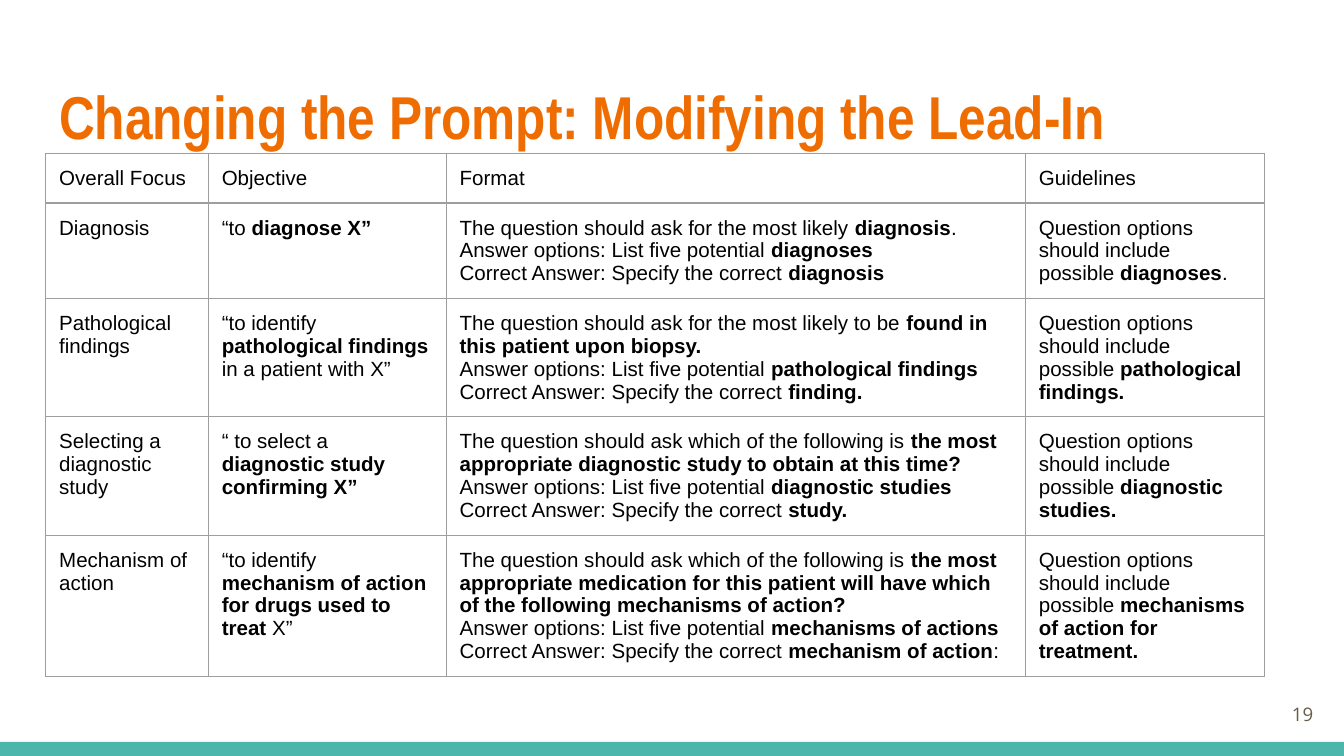
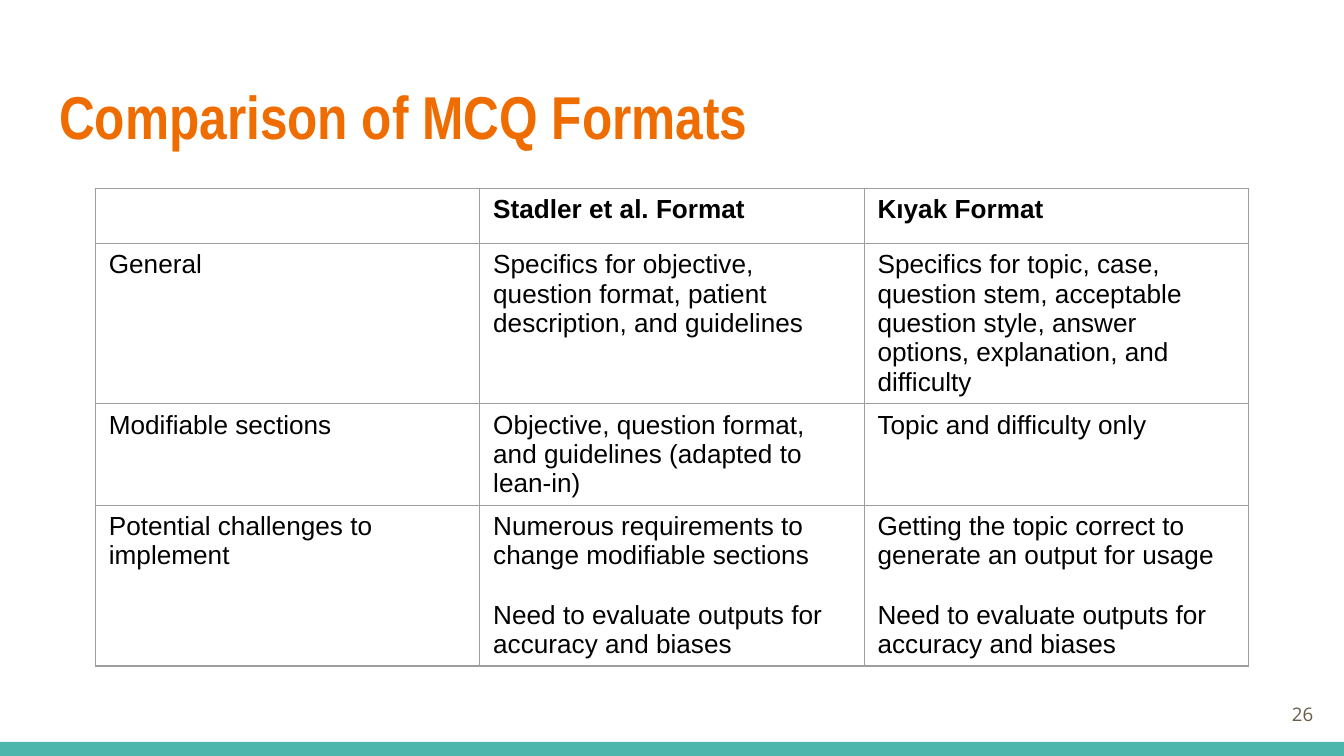
from dataclasses import dataclass

from lxml import etree
from pptx import Presentation
from pptx.dml.color import RGBColor
from pptx.enum.shapes import MSO_SHAPE
from pptx.enum.text import MSO_ANCHOR, MSO_AUTO_SIZE, PP_ALIGN
from pptx.oxml.ns import qn
from pptx.util import Inches, Pt

RECTANGLE = MSO_SHAPE.RECTANGLE
TOP, MIDDLE = MSO_ANCHOR.TOP, MSO_ANCHOR.MIDDLE
LEFT, RIGHT = PP_ALIGN.LEFT, PP_ALIGN.RIGHT
NO_AUTOFIT = MSO_AUTO_SIZE.NONE
TITLE_ONLY = 5
BOLD_MARK = "**"
LINE_BREAK = "\v"
SLIDE_WIDTH = 10
SLIDE_HEIGHT = SLIDE_WIDTH * 9 / 16


@dataclass(frozen=True)
class Theme:
    title_color: str = "EF6C00"
    band_color: str = "4DB6AC"
    text_color: str = "000000"
    number_color: str = "695D46"
    border_color: str = "9E9E9E"
    title_font: str = "Arial Narrow"
    body_font: str = "Arial"
    number_font: str = "Open Sans"
    title_size: float = 32.4
    number_size: float = 10
    border_width: float = 0.75
    inset: float = 0.1


@dataclass(frozen=True)
class TableSpec:
    left: float
    top: float
    col_widths: tuple[float, ...]
    row_heights: tuple[float, ...]
    rows: tuple[tuple[str, ...], ...]
    font_size: float
    inset_y: float
    paragraph_gap: float = 0


@dataclass(frozen=True)
class SlideSpec:
    title: str
    number: str
    table: TableSpec


THEME = Theme()

LEAD_IN_SLIDE = SlideSpec(
    title="Changing the Prompt: Modifying the Lead-In",
    number="19",
    table=TableSpec(
        left=0.34,
        top=1.14,
        col_widths=(1.21, 1.77, 4.31, 1.78),
        row_heights=(0.37, 0.7, 0.88, 0.88, 1.05),
        font_size=11,
        inset_y=0.1,
        rows=(
            ("Overall Focus", "Objective", "Format", "Guidelines"),
            (
                "Diagnosis",
                "“to **diagnose X”**",
                "The question should ask for the most likely **diagnosis**.\n"
                "Answer options: List five potential **diagnoses**\n"
                "Correct Answer: Specify the correct **diagnosis**",
                "Question options should include possible **diagnoses**.",
            ),
            (
                "Pathological findings",
                "“to identify **pathological findings **in a patient with X”",
                "The question should ask for the most likely to be "
                "**found in this patient upon biopsy.\v**"
                "Answer options: List five potential **pathological findings**\n"
                "Correct Answer: Specify the correct **finding.**",
                "Question options should include possible **pathological findings.**",
            ),
            (
                "Selecting a diagnostic study",
                "“ to select a **diagnostic study confirming X”**",
                "The question should ask which of the following is "
                "**the most appropriate diagnostic study to obtain at this time?\v**"
                "Answer options: List five potential **diagnostic studies**\n"
                "Correct Answer: Specify the correct **study.**",
                "Question options should include possible **diagnostic studies.**",
            ),
            (
                "Mechanism of action",
                "“to identify **mechanism of action for drugs used to treat **X”",
                "The question should ask which of the following is "
                "**the most appropriate medication for this patient will have "
                "which of the following mechanisms of action?\v**"
                "Answer options: List five potential **mechanisms of actions **"
                "Correct Answer: Specify the correct **mechanism of action**:",
                "Question options should include possible "
                "**mechanisms of action for treatment.**",
            ),
        ),
    ),
)

FORMATS_SLIDE = SlideSpec(
    title="Comparison of MCQ Formats",
    number="26",
    table=TableSpec(
        left=0.71,
        top=1.4,
        col_widths=(2.86,) * 3,
        row_heights=(0.41, 1.19, 0.75, 1.19),
        font_size=14,
        inset_y=0.05,
        paragraph_gap=16,
        rows=(
            ("", "**Stadler et al. Format**", "**Kıyak Format**"),
            (
                "General",
                "Specifics for objective, question format, patient description, "
                "and guidelines",
                "Specifics for topic, case, question stem, acceptable question "
                "style, answer options, explanation, and difficulty",
            ),
            (
                "Modifiable sections",
                "Objective, question format, and guidelines (adapted to lean-in)",
                "Topic and difficulty only",
            ),
            (
                "Potential challenges to implement",
                "Numerous requirements to change modifiable sections\n"
                "Need to evaluate outputs for accuracy and biases",
                "Getting the topic correct to generate an output for usage\n"
                "Need to evaluate outputs for accuracy and biases",
            ),
        ),
    ),
)


def style_font(font, name: str, size: float, color: str, bold: bool = False) -> None:
    font.name = name
    font.size = Pt(size)
    font.bold = bold
    font.color.rgb = RGBColor.from_string(color)


def set_frame(tf, anchor) -> None:
    """Give a text frame equal insets, wrapping and an anchor."""
    tf.word_wrap = True
    tf.auto_size = NO_AUTOFIT
    tf.vertical_anchor = anchor
    tf.margin_left = tf.margin_right = Inches(THEME.inset)
    tf.margin_top = tf.margin_bottom = Inches(THEME.inset)


def add_title(s, text: str) -> None:
    sp = s.shapes.title
    sp.left, sp.top = Inches(0.34), Inches(0.49)
    sp.width, sp.height = Inches(9.32), Inches(0.77)
    tf = sp.text_frame
    tf.text = text
    set_frame(tf, TOP)
    p = tf.paragraphs[0]
    p.alignment = LEFT
    style_font(p.runs[0].font, THEME.title_font, THEME.title_size,
               THEME.title_color, bold=True)


def add_band(s) -> None:
    sp = s.shapes.add_shape(RECTANGLE, Inches(0), Inches(5.52),
                            Inches(SLIDE_WIDTH), Inches(0.11))
    sp.shadow.inherit = False
    sp.fill.solid()
    sp.fill.fore_color.rgb = RGBColor.from_string(THEME.band_color)
    sp.line.fill.background()


def add_number(s, number: str) -> None:
    sp = s.shapes.add_textbox(Inches(9.27), Inches(5.1), Inches(0.6), Inches(0.43))
    tf = sp.text_frame
    tf.text = number
    set_frame(tf, MIDDLE)
    p = tf.paragraphs[0]
    p.alignment = RIGHT
    style_font(p.runs[0].font, THEME.number_font, THEME.number_size, THEME.number_color)


def set_borders(cell) -> None:
    tc_pr = cell._tc.get_or_add_tcPr()
    for index, side in enumerate(("a:lnL", "a:lnR", "a:lnT", "a:lnB")):
        ln = etree.Element(qn(side), w=str(Pt(THEME.border_width)))
        fill = etree.SubElement(ln, qn("a:solidFill"))
        etree.SubElement(fill, qn("a:srgbClr"), val=THEME.border_color)
        tc_pr.insert(index, ln)


def add_marked_runs(p, line: str, size: float) -> None:
    """Write a line in which ** toggles bold and a vertical tab breaks the line."""
    for i, part in enumerate(line.split(BOLD_MARK)):
        for j, text in enumerate(part.split(LINE_BREAK)):
            if j:
                p.add_line_break()
            if text:
                r = p.add_run()
                r.text = text
                style_font(r.font, THEME.body_font, size, THEME.text_color,
                           bold=i % 2 == 1)


def fill_cell(cell, text: str, spec: TableSpec) -> None:
    cell.margin_left = cell.margin_right = Inches(THEME.inset)
    cell.margin_top = cell.margin_bottom = Inches(spec.inset_y)
    cell.vertical_anchor = TOP
    cell.fill.background()
    set_borders(cell)
    tf = cell.text_frame
    for i, line in enumerate(text.split("\n")):
        p = tf.add_paragraph() if i else tf.paragraphs[0]
        p.font.size = Pt(spec.font_size)
        if i and spec.paragraph_gap:
            p.space_before = Pt(spec.paragraph_gap)
        add_marked_runs(p, line, spec.font_size)


def add_grid(s, spec: TableSpec) -> None:
    frame = s.shapes.add_table(
        len(spec.row_heights), len(spec.col_widths),
        Inches(spec.left), Inches(spec.top),
        Inches(sum(spec.col_widths)), Inches(sum(spec.row_heights)))
    table = frame.table
    table.first_row = table.horz_banding = False
    for column, width in zip(table.columns, spec.col_widths):
        column.width = Inches(width)
    for row, height, texts in zip(table.rows, spec.row_heights, spec.rows):
        row.height = Inches(height)
        for cell, text in zip(row.cells, texts):
            fill_cell(cell, text, spec)


def add_slide(prs, spec: SlideSpec) -> None:
    s = prs.slides.add_slide(prs.slide_layouts[TITLE_ONLY])
    add_band(s)
    add_title(s, spec.title)
    add_grid(s, spec.table)
    add_number(s, spec.number)


def main() -> None:
    prs = Presentation()
    prs.slide_width, prs.slide_height = Inches(SLIDE_WIDTH), Inches(SLIDE_HEIGHT)
    for spec in (LEAD_IN_SLIDE, FORMATS_SLIDE):
        add_slide(prs, spec)
    prs.save("out.pptx")


if __name__ == "__main__":
    main()
